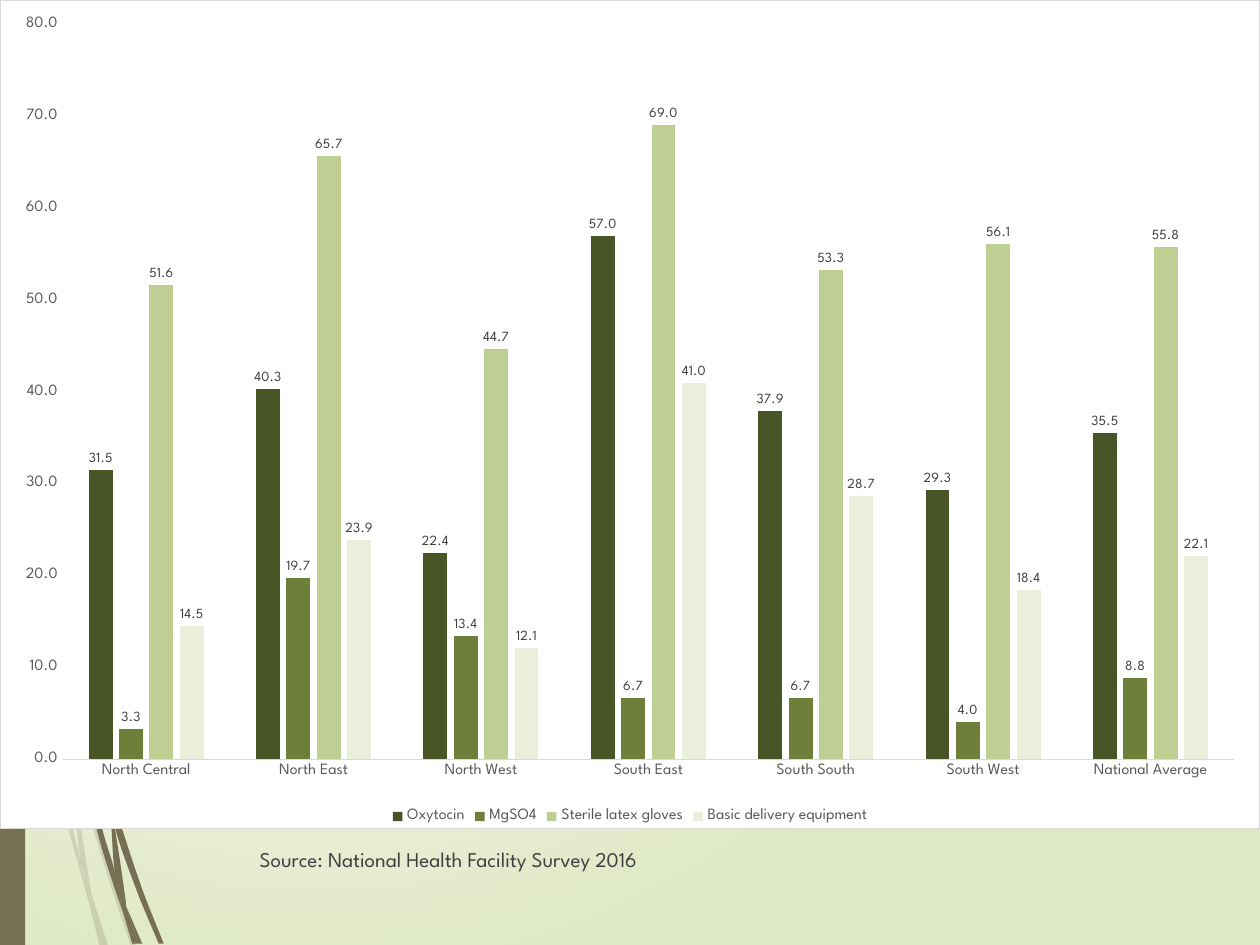
from dataclasses import dataclass

from lxml import etree
from pptx import Presentation
from pptx.chart.chart import Chart
from pptx.chart.data import CategoryChartData
from pptx.dml.color import RGBColor
from pptx.enum.chart import XL_CHART_TYPE as ChartType
from pptx.enum.chart import XL_LABEL_POSITION as LabelPosition
from pptx.enum.chart import XL_LEGEND_POSITION as LegendPosition
from pptx.enum.chart import XL_TICK_MARK as TickMark
from pptx.enum.shapes import MSO_SHAPE as ShapeType
from pptx.enum.text import MSO_ANCHOR as Anchor
from pptx.oxml import parse_xml
from pptx.oxml.ns import qn
from pptx.slide import Slide
from pptx.util import Cm, Pt

FONT = "League Spartan"
COLORS = {
    "paper": "FFFFFF",
    "meadow": "DFE8C4",
    "bark": "766F54",
    "border": "D9D9D9",
    "axis_text": "595959",
    "text": "404040",
}
DRAWING_NS = "http://schemas.openxmlformats.org/drawingml/2006/main"
CHART_NS = "http://schemas.openxmlformats.org/drawingml/2006/chart"
NUMBER_FORMAT = '#,##0.0"";\\-#,##0.0""'
CM_PER_INCH = 2.54
CURVE_STEPS = 6
REGIONS = ["North Central", "North East", "North West", "South East",
           "South South", "South West", "National Average"]
Edge = list[tuple[float, float]]


@dataclass
class Supply:
    name: str
    color: str
    percentages: list[float]


@dataclass
class Blade:
    """A piece of grass between two edges that run downwards, in inches."""
    left: Edge
    right: Edge
    opacity: int = 100


SUPPLIES = [
    Supply("Oxytocin", "495526", [31.5, 40.3, 22.4, 57.0, 37.9, 29.3, 35.5]),
    Supply("MgSO4", "6D7F39", [3.3, 19.7, 13.4, 6.7, 6.7, 4.0, 8.8]),
    Supply("Sterile latex gloves", "BFCE92", [51.6, 65.7, 44.7, 69.0, 53.3, 56.1, 55.8]),
    Supply("Basic delivery equipment", "EAEFDB", [14.5, 23.9, 12.1, 41.0, 28.7, 18.4, 22.1]),
]
BLADES = [
    Blade([(0.61, 5.96), (0.61, 6.1), (0.85, 6.94), (1.04, 7.51)],
          [(0.61, 5.96), (0.64, 6.07), (0.88, 6.92), (1.08, 7.51)], 20),
    Blade([(0.73, 7.11), (0.83, 7.51)], [(0.73, 7.11), (0.86, 7.51)], 20),
    Blade([(0.08, 3.5), (0.19, 4.7), (0.45, 6.21), (0.64, 6.93), (0.7, 7.14)],
          [(0.08, 3.5), (0.12, 3.76), (0.22, 4.69), (0.48, 6.19), (0.64, 6.83),
           (0.69, 7.07), (0.7, 7.14)], 20),
    Blade([(0.58, 5.99), (0.6, 6.46), (0.64, 6.83), (0.67, 6.92), (0.73, 7.11)],
          [(0.58, 5.99), (0.61, 6.1), (0.63, 6.46), (0.72, 7.06), (0.73, 7.11)], 20),
    Blade([(0.7, 7.14), (0.79, 7.51)], [(0.7, 7.14), (0.82, 7.51)], 20),
    Blade([(0.65, 6.83), (0.69, 7.07), (0.7, 7.14), (0.82, 7.51)],
          [(0.65, 6.83), (0.67, 6.92), (0.73, 7.11), (0.83, 7.51)], 20),
    Blade([(0.91, 6.41), (0.91, 6.56), (1.09, 7.08), (1.26, 7.49)],
          [(0.91, 6.41), (0.94, 6.49), (1.13, 7.06), (1.3, 7.49)]),
    Blade([(0.47, 4.77), (0.56, 5.57), (0.77, 6.59), (0.92, 7.08), (0.97, 7.22)],
          [(0.47, 4.77), (0.53, 5.05), (0.6, 5.56), (0.81, 6.57), (0.91, 6.91),
           (0.96, 7.17), (0.97, 7.22)]),
    Blade([(1, 7.19), (1.1, 7.49)], [(1, 7.19), (1.13, 7.49)]),
    Blade([(0.97, 7.22), (1.05, 7.49)], [(0.97, 7.22), (1.08, 7.49)]),
    Blade([(0.88, 6.45), (0.91, 6.91), (0.96, 7.06), (1, 7.19)],
          [(0.88, 6.45), (0.91, 6.56), (1, 7.16), (1, 7.19)]),
    Blade([(0.91, 6.91), (0.96, 7.17), (0.97, 7.22), (1.08, 7.49)],
          [(0.91, 6.91), (0.96, 7.06), (1, 7.19), (1.1, 7.49)]),
]


def rgb(name: str) -> RGBColor:
    return RGBColor.from_string(COLORS[name])


def style_font(font, size: float, color: str) -> None:
    font.name = FONT
    font.size = Pt(size)
    font.color.rgb = rgb(color)


def fill_background(slide: Slide) -> None:
    slide.background.fill.solid()
    properties = slide.background._cSld.bg.bgPr
    properties.replace(properties[0], parse_xml(
        f'<a:gradFill xmlns:a="{DRAWING_NS}" rotWithShape="1"><a:gsLst>'
        f'<a:gs pos="0"><a:srgbClr val="{COLORS["paper"]}"/></a:gs>'
        f'<a:gs pos="100000"><a:srgbClr val="{COLORS["meadow"]}"/></a:gs>'
        '</a:gsLst><a:path path="circle">'
        '<a:fillToRect l="50000" t="50000" r="100000" b="100000"/>'
        '</a:path></a:gradFill>'))


def paint_bark(shape, opacity: int = 100) -> None:
    shape.shadow.inherit = False
    shape.fill.solid()
    shape.fill.fore_color.rgb = rgb("bark")
    shape.line.fill.background()
    if opacity < 100:
        color = shape._element.spPr.find(f".//{qn('a:srgbClr')}")
        etree.SubElement(color, qn("a:alpha"), val=str(opacity * 1000))


def smooth(edge: Edge) -> Edge:
    """Bend an edge through its points, with x as a Hermite curve over y."""
    last = len(edge) - 1
    slopes = []
    for index in range(len(edge)):
        (x0, y0), (x1, y1) = edge[max(index - 1, 0)], edge[min(index + 1, last)]
        slopes.append((x1 - x0) / (y1 - y0))
    points = [edge[0]]
    for index in range(last):
        (x0, y0), (x1, y1) = edge[index], edge[index + 1]
        drop = y1 - y0
        for step in range(1, CURVE_STEPS + 1):
            t = step / CURVE_STEPS
            blend = t * t * (3 - 2 * t)
            bend = t * (1 - t) * drop * ((1 - t) * slopes[index] - t * slopes[index + 1])
            points.append((x0 + (x1 - x0) * blend + bend, y0 + drop * t))
    return points


def draw_blade(slide: Slide, blade: Blade) -> None:
    outline = smooth(blade.left) + smooth(blade.right)[:0:-1]
    start, *others = [(Cm(x * CM_PER_INCH), Cm(y * CM_PER_INCH)) for x, y in outline]
    builder = slide.shapes.build_freeform(*start)
    builder.add_line_segments(others, close=True)
    paint_bark(builder.convert_to_shape(), blade.opacity)


def frame_chart(chart: Chart) -> None:
    """Give the chart area its white fill and thin border."""
    frame = parse_xml(
        f'<c:spPr xmlns:c="{CHART_NS}" xmlns:a="{DRAWING_NS}">'
        f'<a:solidFill><a:srgbClr val="{COLORS["paper"]}"/></a:solidFill>'
        f'<a:ln w="9525"><a:solidFill><a:srgbClr val="{COLORS["border"]}"/>'
        '</a:solidFill></a:ln></c:spPr>')
    chart._chartSpace.find(qn("c:chart")).addnext(frame)


def draw_supply_chart(slide: Slide) -> None:
    data = CategoryChartData(number_format="0.0")
    data.categories = REGIONS
    for supply in SUPPLIES:
        data.add_series(supply.name, supply.percentages)
    chart = slide.shapes.add_chart(
        ChartType.COLUMN_CLUSTERED, 0, 0, Cm(25.4), Cm(16.72), data).chart
    chart.has_title = False
    chart.font.name, chart.font.size = FONT, Pt(10)
    frame_chart(chart)
    chart.has_legend = True
    chart.legend.position = LegendPosition.BOTTOM
    chart.legend.include_in_layout = False
    style_font(chart.legend.font, 9, "axis_text")

    category_axis, value_axis = chart.category_axis, chart.value_axis
    for axis in (category_axis, value_axis):
        axis.major_tick_mark = axis.minor_tick_mark = TickMark.NONE
        axis.has_major_gridlines = False
        style_font(axis.tick_labels.font, 9, "axis_text")
    category_axis.format.line.color.rgb = rgb("border")
    category_axis.format.line.width = Pt(0.75)
    value_axis.format.line.fill.background()
    value_axis.minimum_scale, value_axis.maximum_scale = 0, 80
    value_axis.major_unit = 10

    plot = chart.plots[0]
    plot.vary_by_categories = False
    plot.gap_width, plot.overlap = 219, -27
    for series, supply in zip(plot.series, SUPPLIES):
        series.invert_if_negative = False
        series.format.fill.solid()
        series.format.fill.fore_color.rgb = RGBColor.from_string(supply.color)
        series.data_labels.show_value = True
        series.data_labels.position = LabelPosition.OUTSIDE_END
        style_font(series.data_labels.font, 8, "text")
    for labels in [value_axis.tick_labels, *(series.data_labels for series in plot.series)]:
        labels.number_format = NUMBER_FORMAT
        labels.number_format_is_linked = False


def write_source(slide: Slide) -> None:
    body = slide.placeholders[1]
    body.left, body.top, body.width, body.height = Cm(4.98), Cm(16.94), Cm(15.24), Cm(1.27)
    body.text_frame.text = "Source: National Health Facility Survey 2016"
    body.text_frame.vertical_anchor = Anchor.TOP
    paragraph = body.text_frame.paragraphs[0]
    paragraph.space_before = Pt(10)
    style_font(paragraph.runs[0].font, 12, "text")
    properties = paragraph._p.get_or_add_pPr()
    properties.set("marL", "0")
    properties.set("indent", "0")
    etree.SubElement(properties, qn("a:buNone"))


def main() -> None:
    presentation = Presentation()
    presentation.slide_width, presentation.slide_height = Cm(25.4), Cm(19.05)
    slide = presentation.slides.add_slide(presentation.slide_layouts[1])
    title = slide.shapes.title._element
    title.getparent().remove(title)
    fill_background(slide)
    for blade in BLADES:
        draw_blade(slide, blade)
    paint_bark(slide.shapes.add_shape(ShapeType.RECTANGLE, 0, 0, Cm(0.51), Cm(19.05)))
    draw_supply_chart(slide)
    write_source(slide)
    presentation.save("out.pptx")


if __name__ == "__main__":
    main()
